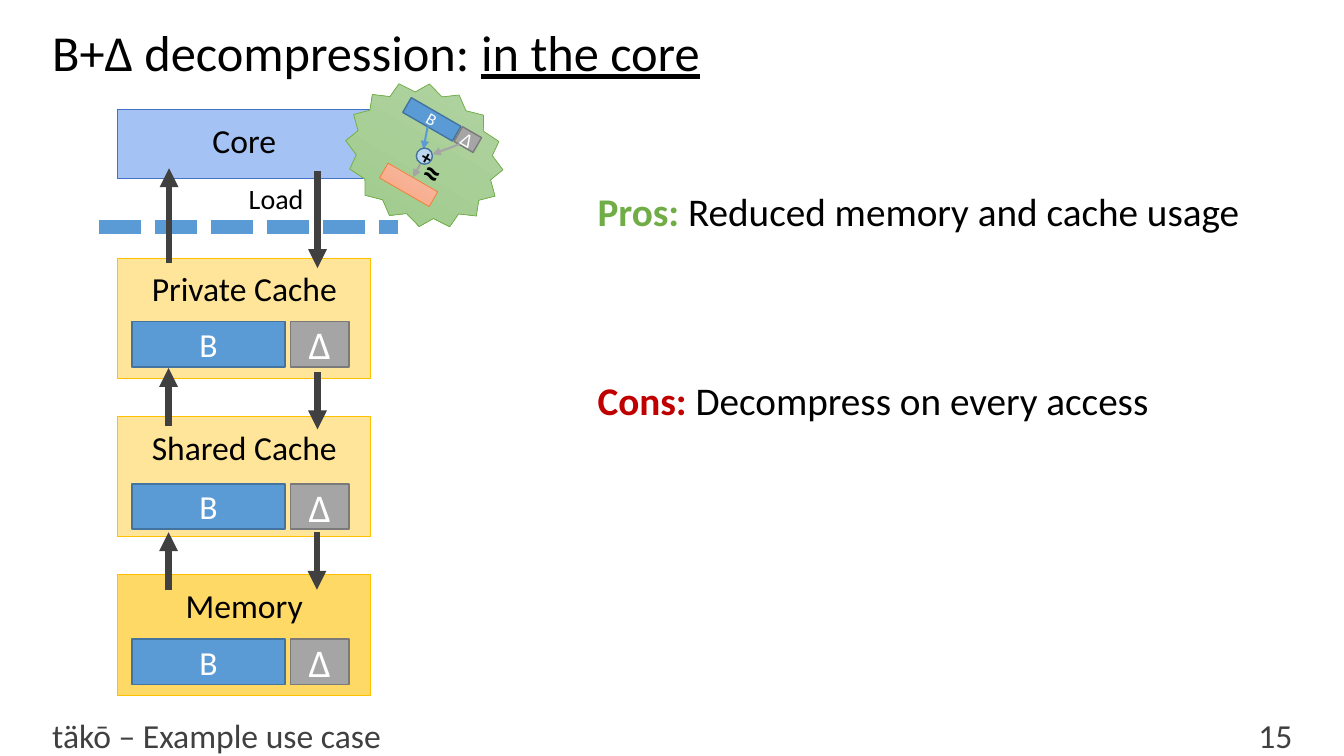
from lxml.etree import SubElement
from pptx import Presentation
from pptx.dml.color import RGBColor
from pptx.enum.dml import MSO_LINE
from pptx.enum.shapes import MSO_CONNECTOR, MSO_SHAPE
from pptx.enum.text import MSO_ANCHOR, PP_ALIGN
from pptx.oxml.ns import qn
from pptx.util import Pt

COLORS = {
    "ink": "000000", "grey_ink": "404040", "white": "FFFFFF",
    "pros": "70AD47", "cons": "C00000",
    "core": "A4C2F4", "core_edge": "4472C4",
    "cache": "FFE599", "memory": "FFD966", "gold": "FFC000",
    "base": "5B9BD5", "base_edge": "43739E",
    "delta": "A5A5A5", "delta_edge": "7A7A7A",
    "burst_top": "B5D5A7", "burst_bottom": "9CC987",
    "result_top": "F7BDA5", "result_bottom": "F8A582", "result_edge": "ED7D31",
    "adder": "BDD7EE",
}


class SlideBuilder:
    """Draws styled elements on one page, with lengths in points."""

    def __init__(self, page, font="Calibri"):
        self.page = page
        self.font = font

    def color(self, name):
        return RGBColor.from_string(COLORS[name])

    def fill_text(self, box, lines, size, align=PP_ALIGN.LEFT, anchor=MSO_ANCHOR.TOP,
                  inset=(7.2, 3.6), gap=0, spacing=None):
        frame = box.text_frame
        frame.word_wrap = True
        frame.vertical_anchor = anchor
        frame.margin_left = frame.margin_right = Pt(inset[0])
        frame.margin_top = frame.margin_bottom = Pt(inset[1])
        for index, spans in enumerate(lines):
            para = frame.add_paragraph() if index else frame.paragraphs[0]
            para.alignment = align
            if index:
                para.space_before = Pt(gap)
            if spacing:
                para.line_spacing = spacing
            for text, color, *marks in spans:
                span = para.add_run()
                span.text = text
                span.font.name = self.font
                span.font.size = Pt(size)
                span.font.color.rgb = self.color(color)
                span.font.bold = "bold" in marks
                span.font.underline = "underline" in marks

    def text(self, left, top, width, height, lines, size, turn=0, **style):
        box = self.page.shapes.add_textbox(Pt(left), Pt(top), Pt(width), Pt(height))
        box.rotation = turn
        self.fill_text(box, lines, size, **style)

    def shape(self, kind, left, top, width, height, fill, edge, weight=1, turn=0):
        box = self.page.shapes.add_shape(kind, Pt(left), Pt(top), Pt(width), Pt(height))
        box.shadow.inherit = False
        box.rotation = turn
        if isinstance(fill, tuple):
            box.fill.gradient()
            box.fill.gradient_angle = 270
            for stop, name in zip(box.fill.gradient_stops, fill):
                stop.color.rgb = self.color(name)
        else:
            box.fill.solid()
            box.fill.fore_color.rgb = self.color(fill)
        box.line.color.rgb = self.color(edge)
        box.line.width = Pt(weight)
        return box

    def level(self, top, height, name, fill, edge):
        box = self.shape(MSO_SHAPE.RECTANGLE, 84, top, 181, height, fill, edge, 0.75)
        self.fill_text(box, [[(name, "ink")]], 24, PP_ALIGN.CENTER, inset=(7.2, 7.2))

    def block(self, left, top, width, height, name, kind, size, turn=0):
        box = self.shape(MSO_SHAPE.RECTANGLE, left, top, width, height,
                         kind, kind + "_edge", turn=turn)
        self.fill_text(box, [[(name, "white")]], size, PP_ALIGN.CENTER,
                       MSO_ANCHOR.MIDDLE, (0, 0))
        return box

    def line(self, start, end, color, weight, arrow=True, source=None, target=None):
        link = self.page.shapes.add_connector(
            MSO_CONNECTOR.STRAIGHT, *(Pt(value) for value in start + end))
        if source:
            link.begin_connect(source, 2)
        if target:
            link.end_connect(target, 0)
        link.begin_x, link.begin_y = (Pt(value) for value in start)
        link.end_x, link.end_y = (Pt(value) for value in end)
        link.line.color.rgb = self.color(color)
        link.line.width = Pt(weight)
        if arrow:
            SubElement(link._element.spPr.find(qn("a:ln")), qn("a:tailEnd"),
                       type="triangle")
        else:
            link.line.dash_style = MSO_LINE.SQUARE_DOT
        SubElement(link._element.spPr, qn("a:effectLst"))


def draw_burst(slide):
    burst = slide.shape(MSO_SHAPE.STAR_16_POINT, 244.8, 61.2, 116.6, 99.4,
                        ("burst_top", "burst_bottom"), "pros", 0.5, 30)
    burst.adjustments[0] = 0.435
    base = slide.block(288, 79.2, 41, 12.2, "B", "base", 12, 30)
    slide.block(326.2, 93.6, 15.8, 12.2, "Δ", "delta", 14, 30)
    result = slide.shape(MSO_SHAPE.RECTANGLE, 271.4, 126, 41, 12.2,
                         ("result_top", "result_bottom"), "result_edge", 0.5, 30)
    slide.line((305.5, 90.5), (302.4, 106.6), "base", 1.5, source=base)
    slide.shape(MSO_SHAPE.OVAL, 297.4, 105.8, 11.5, 11.5, "adder", "base_edge", turn=30)
    slide.line((328.3, 103), (308.9, 110.2), "delta", 1.5)
    slide.line((300.2, 117.4), (295, 126.7), "delta", 1.5, target=result)
    for left, top, width, height, sign, size in (
            (293, 100.1, 24.5, 24.5, "+", 14), (297.4, 105.1, 23.8, 36, "≈", 24)):
        slide.text(left, top, width, height, [[(sign, "ink", "bold")]], size, 30,
                   align=PP_ALIGN.CENTER, anchor=MSO_ANCHOR.MIDDLE, inset=(0, 0))


def main():
    deck = Presentation()
    deck.slide_width, deck.slide_height = Pt(960), Pt(540)
    slide = SlideBuilder(deck.slides.add_slide(deck.slide_layouts[6]))

    slide.text(30.2, 8.6, 900, 61.2,
               [[("B+Δ decompression: ", "ink"), ("in the core", "ink", "underline")]],
               36, anchor=MSO_ANCHOR.MIDDLE, spacing=0.9)
    slide.text(871.2, 510.5, 59, 29.5, [[("15", "grey_ink")]], 24,
               align=PP_ALIGN.RIGHT, anchor=MSO_ANCHOR.MIDDLE)
    slide.text(30.2, 510.5, 818, 28.8, [[("täkō – Example use case", "grey_ink")]], 24,
               anchor=MSO_ANCHOR.MIDDLE)
    slide.text(419.8, 130.3, 523.4, 177,
               [[("Pros: ", "pros", "bold"), ("Reduced memory and cache usage", "ink")],
                [("Cons: ", "cons", "bold"), ("Decompress on every access", "ink")]],
               28, gap=101)

    slide.level(78.5, 49, "Core", "core", "core_edge")
    stores = (("Private Cache", "cache"), ("Shared Cache", "cache"), ("Memory", "memory"))
    for index, (name, fill) in enumerate(stores):
        slide.level(184.5 + 113 * index, 86, name, fill, "gold")

    slide.line((70.6, 162), (284.4, 162), "base", 10, arrow=False)
    draw_burst(slide)
    slide.text(170.6, 122.4, 56.2, 38.9, [[("Load", "ink")]], 20, inset=(7.2, 7.2))

    for x, start, end in ((226.8, 122.4, 191.5), (226.8, 265.7, 306.7),
                          (226.4, 380.2, 421.2), (120.4, 421.2, 380.2),
                          (120.4, 304.6, 262.8), (120.8, 188, 120.2)):
        slide.line((x, start), (x, end), "grey_ink", 4.5)
    for top in (229.7, 345.6, 456.5):
        slide.block(94.3, top, 109.4, 32.4, "B", "base", 24)
        slide.block(207.4, top, 41.8, 32.4, "Δ", "delta", 28)

    deck.save("out.pptx")


if __name__ == "__main__":
    main()
